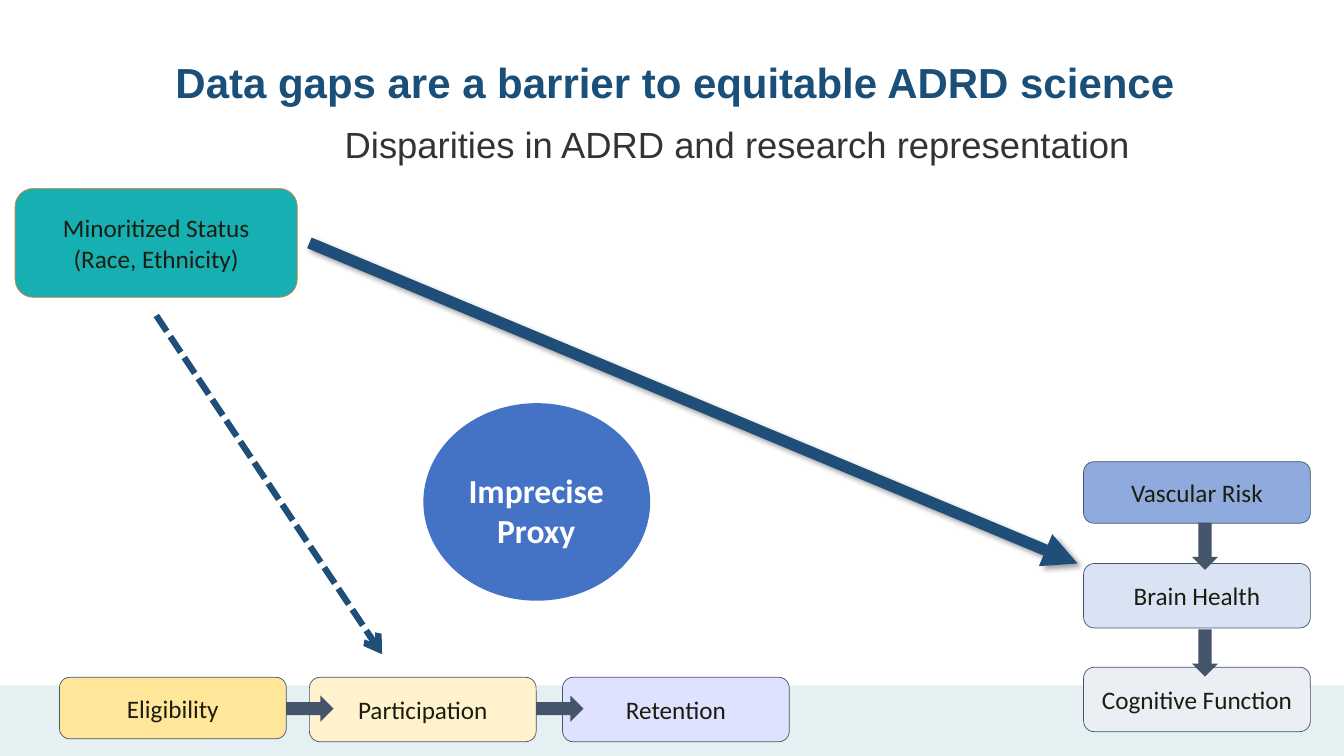
from dataclasses import dataclass

from lxml.etree import SubElement
from pptx import Presentation
from pptx.dml.color import RGBColor
from pptx.enum.dml import MSO_LINE
from pptx.enum.shapes import MSO_CONNECTOR, MSO_SHAPE
from pptx.enum.text import MSO_ANCHOR, PP_ALIGN
from pptx.oxml.ns import qn
from pptx.util import Pt


@dataclass(frozen=True)
class Theme:
    heading_font: str = "Arial"
    body_font: str = "Calibri"
    title_size: int = 30
    subtitle_size: int = 26
    proxy_size: int = 24
    box_size: int = 18
    title: str = "194F78"
    subtitle: str = "333333"
    ink: str = "1C1C10"
    white: str = "FFFFFF"
    outline: str = "44546A"
    path_line: str = "1F4E79"
    band: str = "CDE4E6"
    proxy: str = "4472C4"
    status: str = "16B0B2"
    status_line: str = "ED7D31"


T = Theme()


def add_block(shapes, kind, x, y, w, h, fill, line=None):
    sp = shapes.add_shape(kind, Pt(x), Pt(y), Pt(w), Pt(h))
    sp.shadow.inherit = False
    sp.fill.solid()
    sp.fill.fore_color.rgb = RGBColor.from_string(fill)
    if line:
        sp.line.color.rgb = RGBColor.from_string(line)
        sp.line.width = Pt(0.5)
    else:
        sp.line.fill.background()
    return sp


def set_text(sp, lines, size, color, font=T.body_font, bold=False):
    tf = sp.text_frame
    tf.word_wrap = True
    tf.text = lines
    for p in tf.paragraphs:
        p.alignment = PP_ALIGN.CENTER
        p.font.name = font
        p.font.size = Pt(size)
        p.font.bold = bold
        p.font.color.rgb = RGBColor.from_string(color)
    return tf


prs = Presentation()
prs.slide_width, prs.slide_height = Pt(960), Pt(540)
s = prs.slides.add_slide(prs.slide_layouts[5])
shapes = s.shapes

# Translucent footer band
band = add_block(shapes, MSO_SHAPE.RECTANGLE, 0, 489.6, 960, 50.4, T.band)
band_color = band.fill._xPr.find(qn("a:solidFill"))[0]
SubElement(band_color, qn("a:alpha"), val="53000")

# Title and subtitle
title = shapes.title
title.left, title.top, title.width, title.height = Pt(13.7), Pt(16.6), Pt(937.4), Pt(77.8)
tf = set_text(title, "Data gaps are a barrier to equitable ADRD science",
              T.title_size, T.title, T.heading_font, True)
tf.vertical_anchor = MSO_ANCHOR.MIDDLE
tf.paragraphs[0].line_spacing = 1.15

subtitle = shapes.add_textbox(Pt(227), Pt(87.1), Pt(600), Pt(43.9))
tf = set_text(subtitle, "Disparities in ADRD and research representation",
              T.subtitle_size, T.subtitle, T.heading_font)
tf.paragraphs[0].line_spacing = 0.9

# Labelled boxes: outcomes on the right, study steps below, status top left
boxes = [
    ("Vascular Risk", 774, 329.8, 162, 43.9, "8FAADC", T.outline),
    ("Brain Health", 774, 402.5, 162, 46.1, "DAE3F3", T.outline),
    ("Cognitive Function", 774, 476.6, 162, 46.1, "EBEEF2", T.outline),
    ("Eligibility", 42.5, 483.8, 162, 43.9, "FFE699", T.outline),
    ("Participation", 221, 483.8, 162, 46.1, "FFF2CC", T.outline),
    ("Retention", 401.8, 483.8, 162, 46.1, "DEE2FF", T.outline),
    ("Minoritized Status\n(Race, Ethnicity)", 10.8, 134.6, 201.6, 77.8, T.status, T.status_line),
]
for label, x, y, w, h, fill, line in boxes:
    sp = add_block(shapes, MSO_SHAPE.ROUNDED_RECTANGLE, x, y, w, h, fill, line)
    tf = set_text(sp, label, T.box_size, T.ink)
    tf.vertical_anchor = MSO_ANCHOR.MIDDLE

# Block arrows between the boxes
for y in (373.3, 449.6):
    add_block(shapes, MSO_SHAPE.DOWN_ARROW, 851.4, y, 18.7, 33.8, T.outline)
for x in (204.5, 383):
    add_block(shapes, MSO_SHAPE.RIGHT_ARROW, x, 496.8, 33.8, 18.7, T.outline)

# Long arrows from status to brain health and to participation
for x1, y1, x2, y2, width, dash, head, shadow in [
    (221, 173.5, 769.7, 402.5, 8.25, None, "triangle", True),
    (111.6, 225.4, 272.9, 467.3, 4.5, MSO_LINE.SQUARE_DOT, "arrow", False),
]:
    c = shapes.add_connector(MSO_CONNECTOR.STRAIGHT, Pt(x1), Pt(y1), Pt(x2), Pt(y2))
    c.line.color.rgb = RGBColor.from_string(T.path_line)
    c.line.width = Pt(width)
    if dash:
        c.line.dash_style = dash
    SubElement(c.line._get_or_add_ln(), qn("a:tailEnd"), type=head)
    effects = SubElement(c._element.spPr, qn("a:effectLst"))
    if shadow:
        outer = SubElement(effects, qn("a:outerShdw"), blurRad=str(Pt(4)), dist=str(Pt(3)),
                           dir="2700000", algn="tl", rotWithShape="0")
        black = SubElement(outer, qn("a:srgbClr"), val="000000")
        SubElement(black, qn("a:alpha"), val="40000")

# Imprecise proxy circle with its label
proxy = shapes.add_group_shape()
add_block(proxy.shapes, MSO_SHAPE.OVAL, 302.4, 288, 162, 141.1, T.proxy)
label = proxy.shapes.add_textbox(Pt(317.5), Pt(331.9), Pt(131), Pt(65.5))
set_text(label, "Imprecise Proxy", T.proxy_size, T.white, bold=True)

prs.save("out.pptx")
